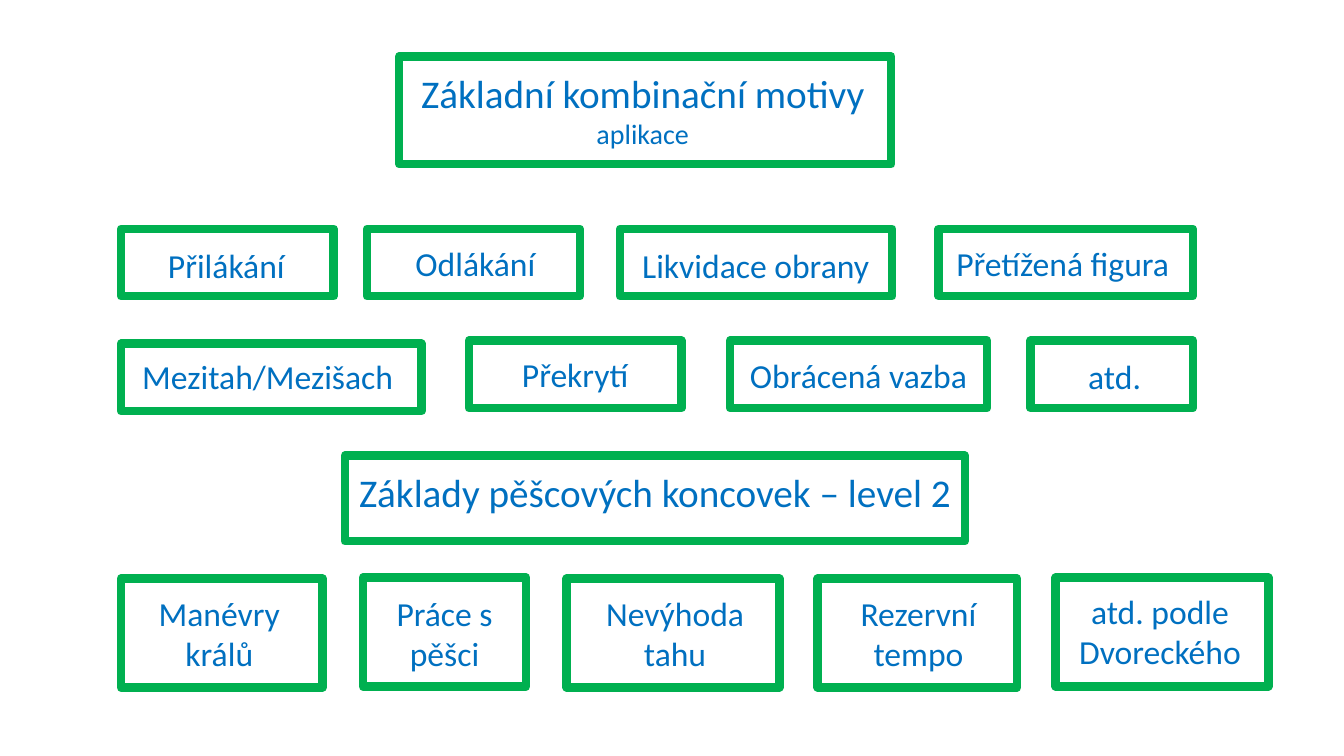
from typing import NamedTuple

import pptx
import pptx.dml.color
import pptx.enum.shapes
import pptx.enum.text
import pptx.util

Inches = pptx.util.Inches
GREEN = pptx.dml.color.RGBColor(0x00, 0xB0, 0x50)
BLUE = pptx.dml.color.RGBColor(0x00, 0x70, 0xC0)


class Card(NamedTuple):
    """A frame and the label inside it, in inches."""
    label: str
    left: float
    width: float
    text_left: float
    text_width: float
    top: float
    text_top: float


class Row(NamedTuple):
    """Cards that share a frame height and a label height."""
    height: float
    text_height: float
    sizes: tuple[int, ...]  # points, one for each line of a label
    cards: list[Card]


ROWS = [
    # Combination motifs: heading
    Row(1.07, 0.91, (28, 20), [
        Card("Základní kombinační motivy\naplikace", 3.96, 4.88, 4.06, 4.63, 0.56, 0.64),
    ]),
    # Combination motifs: topics
    Row(0.67, 0.5, (24,), [
        Card("Přilákání", 1.2, 2.11, 1.3, 1.89, 2.27, 2.38),
        Card("Odlákání", 3.64, 2.11, 3.77, 1.89, 2.27, 2.36),
        Card("Likvidace obrany", 6.15, 2.7, 6.24, 2.51, 2.27, 2.38),
        Card("Přetížená figura", 9.31, 2.52, 9.35, 2.38, 2.27, 2.36),
        Card("Mezitah/Mezišach", 1.2, 2.98, 1.3, 2.71, 3.41, 3.48),
        Card("Překrytí", 4.65, 2.11, 4.76, 1.89, 3.38, 3.46),
        Card("Obrácená vazba", 7.24, 2.55, 7.31, 2.41, 3.38, 3.47),
        Card("atd.", 10.22, 1.61, 10.37, 1.37, 3.38, 3.48),
    ]),
    # Pawn endings: heading
    Row(0.85, 0.57, (28,), [
        Card("Základy pěšcových koncovek – level 2", 3.42, 6.15, 3.42, 6.15, 4.52, 4.6),
    ]),
    # Pawn endings: topics
    Row(1.08, 0.91, (24,), [
        Card("Manévry králů", 1.2, 2, 1.29, 1.77, 5.74, 5.83),
        Card("Práce s pěšci", 3.6, 1.62, 3.71, 1.4, 5.73, 5.83),
        Card("Nevýhoda tahu", 5.62, 2.11, 5.75, 1.89, 5.74, 5.83),
        Card("Rezervní tempo", 8.11, 1.98, 8.28, 1.66, 5.74, 5.83),
        Card("atd. podle Dvoreckého", 10.47, 2.11, 10.54, 1.93, 5.73, 5.81),
    ]),
]


def add_frame(shapes, left: float, top: float, width: float, height: float) -> None:
    frame = shapes.add_shape(pptx.enum.shapes.MSO_SHAPE.RECTANGLE, Inches(left),
                             Inches(top), Inches(width), Inches(height))
    frame.shadow.inherit = False
    frame.fill.background()
    frame.line.color.rgb = GREEN
    frame.line.width = pptx.util.Pt(6)


def add_text(shapes, text: str, *, left: float, top: float, width: float,
             height: float, sizes: tuple[int, ...]) -> None:
    box = shapes.add_textbox(Inches(left), Inches(top), Inches(width), Inches(height))
    body = box.text_frame
    body.word_wrap = True
    body.auto_size = pptx.enum.text.MSO_AUTO_SIZE.SHAPE_TO_FIT_TEXT
    body.text = text
    for line, size in zip(body.paragraphs, sizes):
        line.alignment = pptx.enum.text.PP_ALIGN.CENTER
        font = line.runs[0].font
        font.name = "Calibri"
        font.size = pptx.util.Pt(size)
        font.color.rgb = BLUE


def main() -> None:
    deck = pptx.Presentation()
    deck.slide_width, deck.slide_height = Inches(13.33), Inches(7.5)
    shapes = deck.slides.add_slide(deck.slide_layouts[6]).shapes
    for row in ROWS:
        for card in row.cards:
            add_frame(shapes, card.left, card.top, card.width, row.height)
            add_text(shapes, card.label, left=card.text_left, top=card.text_top,
                     width=card.text_width, height=row.text_height, sizes=row.sizes)
    deck.save("out.pptx")


if __name__ == "__main__":
    main()
